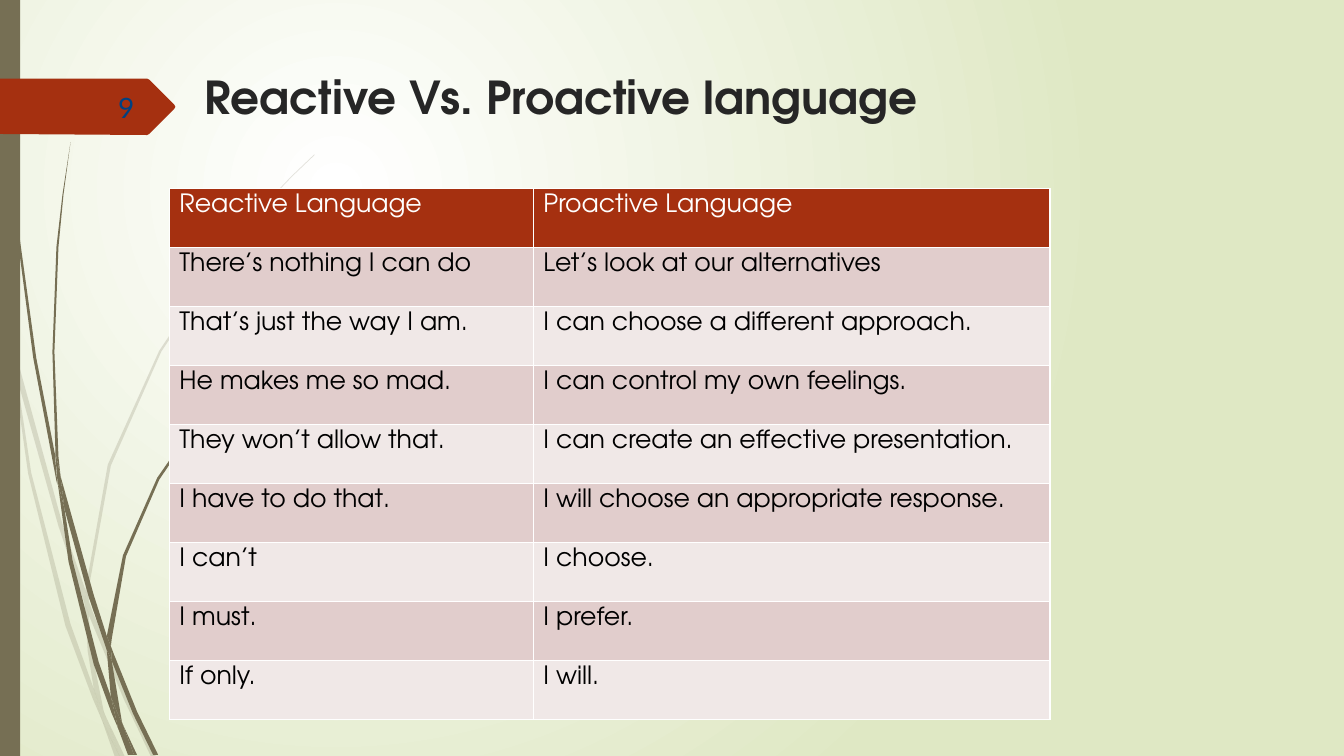
from lxml import etree
from pptx import Presentation
from pptx.dml.color import RGBColor
from pptx.enum.shapes import MSO_SHAPE
from pptx.enum.text import MSO_ANCHOR as Anchor, MSO_AUTO_SIZE as AutoSize, PP_ALIGN as Align
from pptx.oxml import parse_xml
from pptx.oxml.ns import nsdecls, qn
from pptx.util import Pt

# Content
TITLE = "Reactive Vs. Proactive language"
PAGE_NUMBER = "9"
ROWS = [
    ("Reactive Language", "Proactive Language"),
    ("There’s nothing I can do", "Let’s look at our alternatives"),
    ("That’s just the way I am.", "I can choose a different approach."),
    ("He makes me so mad.", "I can control my own feelings."),
    ("They won’t allow that.", "I can create an effective presentation."),
    ("I have to do that.", "I will choose an appropriate response."),
    ("I can’t", "I choose."),
    ("I must.", "I prefer."),
    ("If only.", "I will."),
]

# Look
WHITE = RGBColor(0xFF, 0xFF, 0xFF)
BLACK = RGBColor(0x00, 0x00, 0x00)
CHARCOAL = RGBColor(0x26, 0x26, 0x26)
GREEN = RGBColor(0xDF, 0xE8, 0xC4)
OLIVE = RGBColor(0x76, 0x6F, 0x54)
RUST = RGBColor(0xA5, 0x30, 0x10)
NAVY = RGBColor(0x00, 0x41, 0x82)
BANDS = [RGBColor(0xF0, 0xE8, 0xE7), RGBColor(0xE1, 0xCD, 0xCC)]
HEADING_FONT, NUMBER_FONT = "TeX Gyre Adventor", "Lato"

# Outlines, in grid units of 0.72 pt
GRID = Pt(0.72)
FAINT_GRASS = [
    [(11, 350), (9, 322), (0, 282), (0, 299), (10, 344)],
    [(58, 522), (84, 599), (85, 586), (62, 520), (14, 345), (17, 376)],
    [(92, 607), (88, 596), (88, 610), (123, 694), (150, 751), (155, 751), (127, 692)],
    [(119, 751), (124, 751), (105, 711)],
    [(93, 683), (70, 619), (31, 469), (17, 376), (11, 350), (28, 470), (65, 621),
     (92, 693), (101, 714), (99, 707)],
    [(84, 599), (87, 646), (93, 683), (96, 692), (105, 711), (103, 706), (91, 646),
     (88, 610), (88, 608)],
    [(88, 584), (110, 462), (160, 349), (229, 245), (268, 198), (290, 175), (312, 154),
     (312, 153), (289, 175), (268, 197), (228, 244), (158, 348), (107, 461), (85, 584),
     (85, 586), (88, 596)],
    [(101, 714), (114, 751), (119, 751)],
    [(88, 608), (88, 610), (88, 596), (85, 586), (84, 599)],
    [(96, 692), (93, 683), (99, 707), (101, 714), (119, 751), (105, 711)],
]
DARK_GRASS = [
    [(7, 110), (17, 233), (33, 355), (56, 477), (57, 481), (55, 457), (55, 453),
     (36, 355), (19, 232), (8, 109), (5, 48), (4, 0), (3, 0), (4, 48)],
    [(88, 592), (106, 645), (106, 633), (106, 631), (93, 590), (60, 472), (64, 505)],
    [(113, 649), (110, 641), (111, 656), (132, 708), (152, 749), (157, 749), (136, 706)],
    [(110, 691), (98, 657), (72, 556), (64, 505), (57, 477), (68, 557), (93, 659),
     (111, 708), (117, 722), (116, 717)],
    [(60, 472), (58, 453), (54, 349), (58, 245), (63, 193), (70, 141), (62, 193),
     (56, 245), (52, 349), (55, 449)],
    [(133, 749), (136, 749), (122, 719)],
    [(57, 477), (64, 505), (60, 472), (55, 449), (55, 453)],
    [(111, 633), (125, 552), (158, 476), (205, 406), (231, 374), (245, 359), (261, 344),
     (260, 344), (245, 358), (231, 373), (204, 405), (156, 474), (122, 551), (106, 631),
     (110, 641)],
    [(117, 722), (127, 749), (131, 749)],
    [(106, 645), (110, 691), (116, 706), (122, 719), (121, 716), (111, 656), (109, 651)],
    [(106, 645), (109, 651), (111, 656), (110, 641), (106, 631), (106, 633)],
    [(116, 706), (110, 691), (116, 717), (117, 722), (130, 749), (133, 749), (122, 719)],
]
NUMBER_TAG = [(0, 78), (146, 78), (148, 79), (173, 104), (174, 106), (173, 108),
              (148, 133), (146, 134), (0, 133)]


def write_text(frame, text, font, size, color, bold=False, align=Align.LEFT):
    paragraph = frame.paragraphs[0]
    paragraph.alignment = align
    run = paragraph.add_run()
    run.text = text
    run.font.name = font
    run.font.size = Pt(size)
    run.font.bold = bold
    run.font.color.rgb = color


def paint(shape, color, opacity=100):
    shape.shadow.inherit = False
    shape.line.fill.background()
    shape.fill.solid()
    shape.fill.fore_color.rgb = color
    if opacity < 100:
        tint = shape.fill._xPr.find(qn("a:solidFill"))[0]
        etree.SubElement(tint, qn("a:alpha")).set("val", str(opacity * 1000))


def draw_outline(slide, points, color, opacity=100):
    builder = slide.shapes.build_freeform(*points[0], scale=GRID)
    builder.add_line_segments(points[1:], close=True)
    paint(builder.convert_to_shape(), color, opacity)


def set_background(slide):
    fill = slide.background.fill
    fill.gradient()
    for stop, color in zip(fill.gradient_stops, (WHITE, GREEN)):
        stop.color.rgb = color
    linear = slide._element.find(".//" + qn("a:lin"))
    radial = parse_xml(
        f'<a:path {nsdecls("a")} path="circle">'
        '<a:fillToRect l="50000" t="50000" r="100000" b="100000"/></a:path>')
    linear.getparent().replace(linear, radial)


def add_title(slide):
    title = slide.shapes.title
    title.left, title.top, title.width, title.height = Pt(139), Pt(46), Pt(592.5), Pt(43)
    frame = title.text_frame
    frame.word_wrap = True
    frame.auto_size = AutoSize.NONE
    frame.vertical_anchor = Anchor.TOP
    write_text(frame, TITLE, HEADING_FONT, 32.4, CHARCOAL, bold=True)


def add_page_number(slide):
    box = slide.shapes.add_textbox(Pt(42), Pt(62), Pt(61), Pt(29))
    box.text_frame.word_wrap = True
    box.text_frame.vertical_anchor = Anchor.MIDDLE
    write_text(box.text_frame, PAGE_NUMBER, NUMBER_FONT, 20, NAVY, align=Align.RIGHT)


def add_language_table(slide):
    widths, row_height = (Pt(260), Pt(369)), Pt(42.2)
    table = slide.shapes.add_table(len(ROWS), len(widths), Pt(121), Pt(134.6),
                                   sum(widths), row_height * len(ROWS)).table
    for column, width in zip(table.columns, widths):
        column.width = width
    for index, texts in enumerate(ROWS):
        table.rows[index].height = row_height
        for cell, text in zip(table.rows[index].cells, texts):
            cell.fill.solid()
            cell.fill.fore_color.rgb = BANDS[index % 2] if index else RUST
            write_text(cell.text_frame, text, HEADING_FONT, 18, BLACK if index else WHITE)


def main():
    presentation = Presentation()
    presentation.slide_width, presentation.slide_height = Pt(960), Pt(540)
    slide = presentation.slides.add_slide(presentation.slide_layouts[5])
    set_background(slide)

    # Grass, side bar and number tag
    for blade in FAINT_GRASS:
        draw_outline(slide, blade, OLIVE, opacity=20)
    for blade in DARK_GRASS:
        draw_outline(slide, blade, OLIVE)
    paint(slide.shapes.add_shape(MSO_SHAPE.RECTANGLE, 0, 0, Pt(14.4), Pt(540)), OLIVE)
    draw_outline(slide, NUMBER_TAG, RUST)

    # Text and table
    add_title(slide)
    add_page_number(slide)
    add_language_table(slide)
    presentation.save("out.pptx")


if __name__ == "__main__":
    main()
